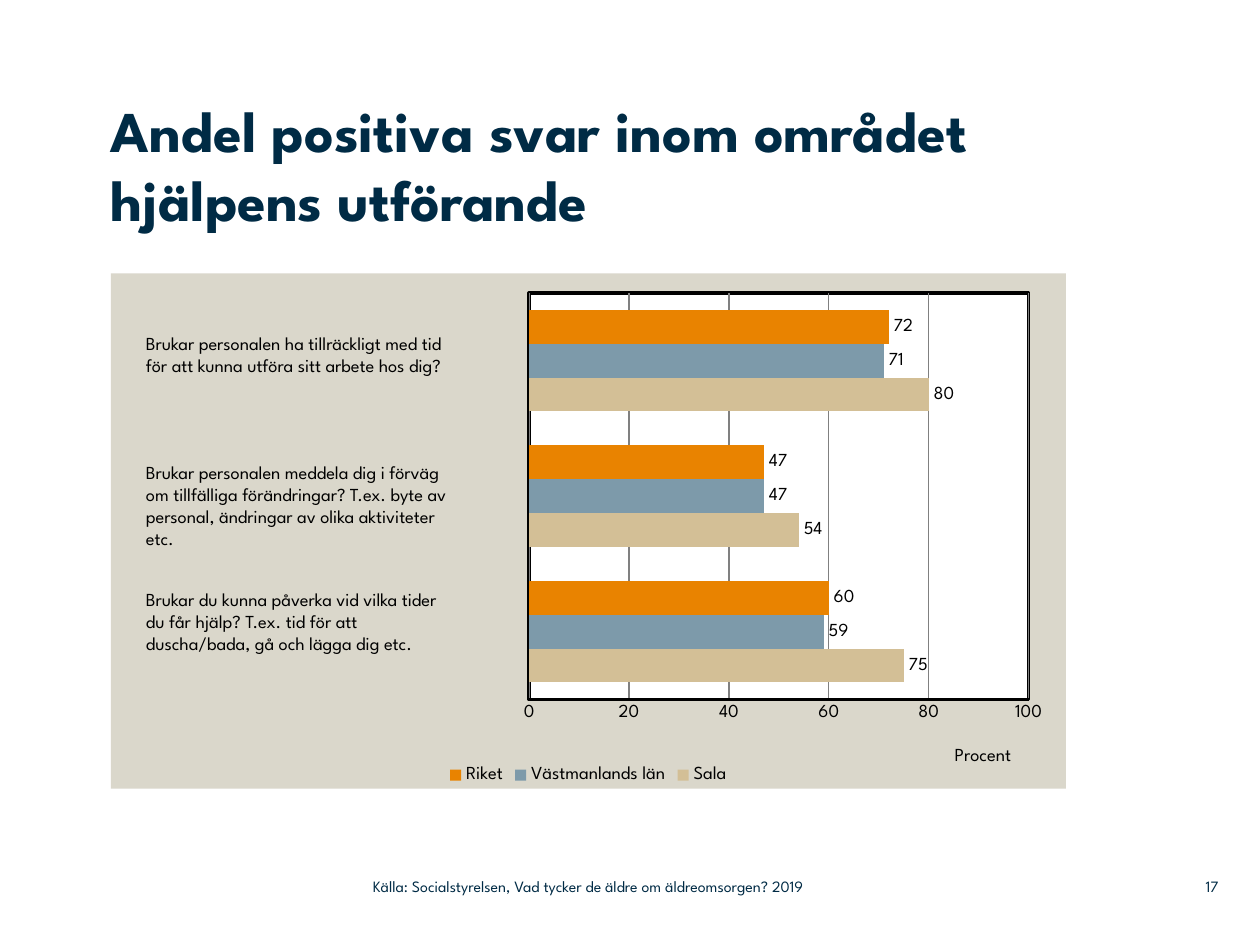
from dataclasses import dataclass

from lxml import etree
from pptx import Presentation
from pptx.chart.data import CategoryChartData
from pptx.dml.color import RGBColor
from pptx.enum.chart import XL_CHART_TYPE as ChartType
from pptx.enum.chart import XL_LABEL_POSITION as LabelPosition
from pptx.enum.chart import XL_LEGEND_POSITION as LegendPosition
from pptx.enum.chart import XL_TICK_MARK as TickMark
from pptx.enum.text import MSO_ANCHOR as Anchor
from pptx.enum.text import MSO_AUTO_SIZE as AutoSize
from pptx.enum.text import PP_ALIGN as Align
from pptx.oxml import parse_xml
from pptx.oxml.ns import nsdecls, qn
from pptx.util import Inches, Pt

FONT = "League Spartan"
NAVY, BLACK, WHITE = "002B45", "000000", "FFFFFF"
BEIGE, GRID_GREY = "DAD7CB", "808080"


@dataclass
class Region:
    name: str
    shares: tuple[int, ...]
    color: str


@dataclass
class TextBlock:
    box: tuple[float, float, float, float]
    lines: tuple[str, ...]
    size: float = 10.5
    color: str = BLACK
    align: Align = Align.LEFT
    footer: bool = False


REGIONS = [
    Region("Sala", (75, 54, 80), "D3BF96"),
    Region("Västmanlands län", (59, 47, 71), "7D9AAA"),
    Region("Riket", (60, 47, 72), "E98300"),
]
QUESTIONS = [
    TextBlock((1.06, 2.59, 3.02, 0.45), (
        "Brukar personalen ha tillräckligt med tid",
        "för att kunna utföra sitt arbete hos dig?")),
    TextBlock((1.06, 3.61, 3.02, 0.81), (
        "Brukar personalen meddela dig i förväg",
        "om tillfälliga förändringar? T.ex. byte av personal, "
        "ändringar av olika aktiviteter",
        "etc.")),
    TextBlock((1.06, 4.62, 3.02, 0.63), (
        "Brukar du kunna påverka vid vilka tider",
        "du får hjälp? T.ex. tid för att",
        "duscha/bada, gå och lägga dig etc.")),
]
FOOTERS = [
    TextBlock((9.2, 6.89, 0.47, 0.29), ("17",), 9, NAVY, Align.RIGHT, True),
    TextBlock((2.96, 6.89, 4.43, 0.29), (
        "Källa: Socialstyrelsen, Vad tycker de äldre om äldreomsorgen? 2019",),
        9, NAVY, Align.LEFT, True),
]


def rgb(color: str) -> RGBColor:
    return RGBColor.from_string(color)


def style_font(font, size: float, color: str, bold: bool = False) -> None:
    font.name, font.size, font.bold = FONT, Pt(size), bold
    font.color.rgb = rgb(color)


def clear_margins(frame) -> None:
    frame.margin_left = frame.margin_right = 0
    frame.margin_top = frame.margin_bottom = 0


def add_title(slide, text: str) -> None:
    title = slide.shapes.title
    title.left, title.top = Inches(0.88), Inches(0.75)
    title.width, title.height = Inches(7.6), Inches(1.42)
    frame = title.text_frame
    clear_margins(frame)
    frame.word_wrap, frame.auto_size = True, AutoSize.NONE
    frame.vertical_anchor = Anchor.TOP
    paragraph = frame.paragraphs[0]
    paragraph.alignment = Align.LEFT
    run = paragraph.add_run()
    run.text = text
    style_font(run.font, 33, NAVY, bold=True)


def add_text(slide, block: TextBlock) -> None:
    frame = slide.shapes.add_textbox(*map(Inches, block.box)).text_frame
    frame.word_wrap = True
    if block.footer:
        clear_margins(frame)
        frame.vertical_anchor = Anchor.MIDDLE
    for index, line in enumerate(block.lines):
        paragraph = frame.add_paragraph() if index else frame.paragraphs[0]
        paragraph.alignment = block.align
        run = paragraph.add_run()
        run.text = line
        style_font(run.font, block.size, block.color)


def set_layout(element, **settings: str | float) -> None:
    """Give a chart part a manual position in fractions of the chart."""
    for old in element.findall(qn("c:layout")):
        element.remove(old)
    layout = etree.Element(qn("c:layout"))
    manual = etree.SubElement(layout, qn("c:manualLayout"))
    for key, value in settings.items():
        etree.SubElement(manual, qn(f"c:{key}")).set("val", str(value))
    text = element.find(qn("c:tx"))
    element.insert(0 if text is None else 1, layout)


def fill_xml(color: str, line: str = "<a:ln><a:noFill/></a:ln>"):
    return parse_xml(
        f'<c:spPr {nsdecls("c", "a")}><a:solidFill><a:srgbClr val="{color}"/>'
        f"</a:solidFill>{line}</c:spPr>")


def style_value_axis(axis) -> None:
    axis.minimum_scale, axis.maximum_scale, axis.major_unit = 0, 100, 20
    axis.major_tick_mark = axis.minor_tick_mark = TickMark.NONE
    axis.format.line.color.rgb = rgb(BLACK)
    axis.format.line.width = Pt(2)
    grid = axis.major_gridlines.format.line
    grid.color.rgb, grid.width = rgb(GRID_GREY), Pt(0.75)
    style_font(axis.tick_labels.font, 10.5, BLACK)
    run = axis.axis_title.text_frame.paragraphs[0].add_run()
    run.text = "Procent"
    style_font(run.font, 10.5, BLACK)
    set_layout(axis.axis_title._element, xMode="edge", yMode="edge",
               x=0.88, y=0.91)


def add_answer_chart(slide) -> None:
    data = CategoryChartData()
    data.categories = ["1", "2", "3"]
    for region in REGIONS:
        data.add_series(region.name, region.shares)
    chart = slide.shapes.add_chart(
        ChartType.BAR_CLUSTERED, Inches(0.88), Inches(2.17),
        Inches(7.58), Inches(4.09), data).chart
    style_font(chart.font, 10.5, BLACK)
    chart.has_title = False
    chart.has_legend = True
    chart.legend.position = LegendPosition.BOTTOM
    chart.legend.include_in_layout = False
    chart.category_axis.visible = False
    style_value_axis(chart.value_axis)

    plot = chart.plots[0]
    plot.gap_width, plot.overlap, plot.vary_by_categories = 100, 0, False
    for series, region in zip(plot.series, REGIONS):
        series.format.fill.solid()
        series.format.fill.fore_color.rgb = rgb(region.color)
        labels = series.data_labels
        labels.show_value, labels.position = True, LabelPosition.OUTSIDE_END
        style_font(labels.font, 10.5, BLACK)

    space = chart._chartSpace
    area = space.chart.plotArea
    set_layout(area, layoutTarget="inner", xMode="edge", yMode="edge",
               x=0.438, y=0.038, w=0.523, h=0.789)
    area.append(fill_xml(WHITE, (
        f'<a:ln w="{Pt(2)}"><a:solidFill><a:srgbClr val="{BLACK}"/>'
        "</a:solidFill></a:ln>")))
    space.chart.addnext(fill_xml(BEIGE))


def main() -> None:
    deck = Presentation()
    deck.slide_width, deck.slide_height = Inches(10), Inches(7.5)
    slide = deck.slides.add_slide(deck.slide_layouts[5])
    add_title(slide, "Andel positiva svar inom området hjälpens utförande")
    add_answer_chart(slide)
    for block in QUESTIONS + FOOTERS:
        add_text(slide, block)
    deck.save("out.pptx")


if __name__ == "__main__":
    main()
